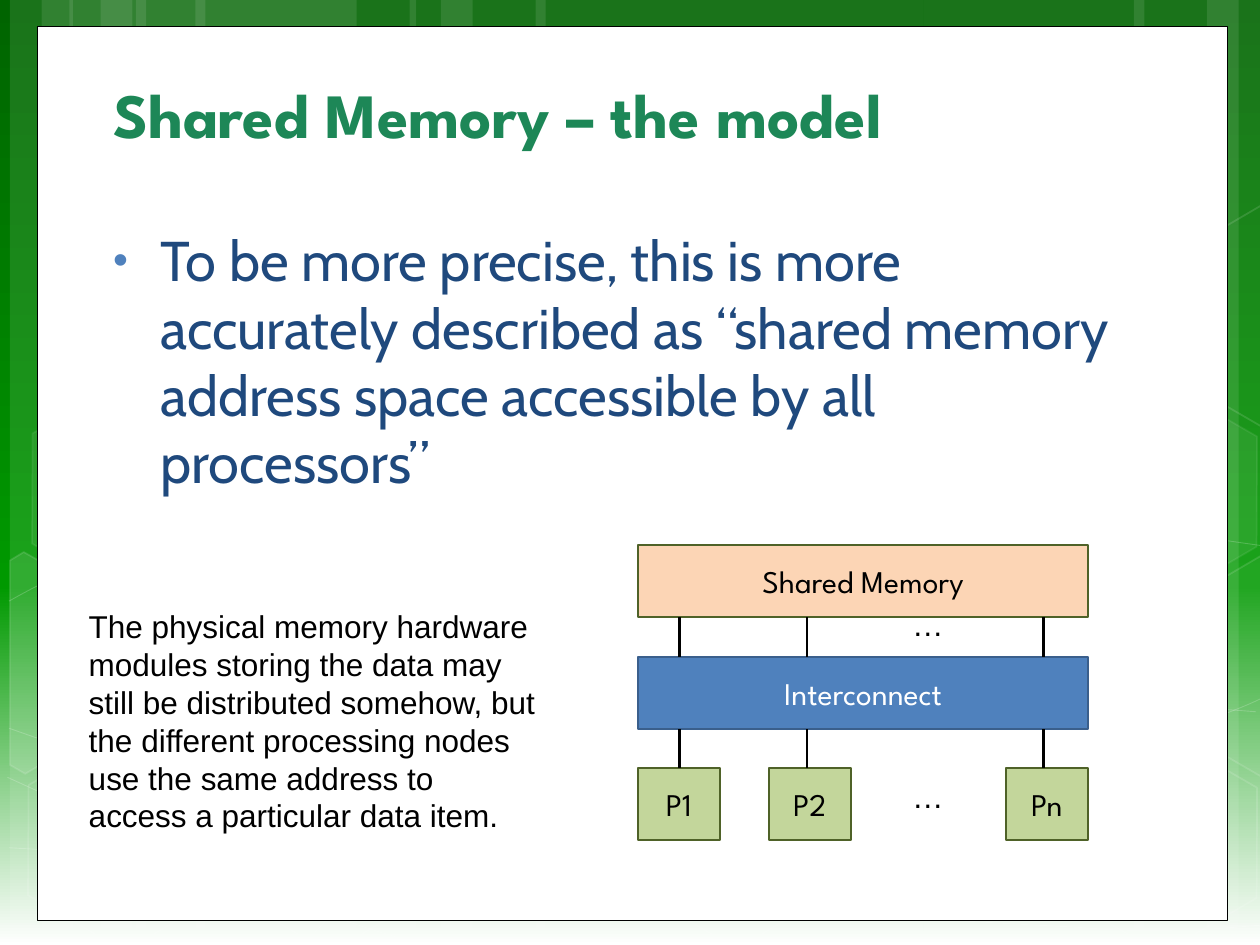
from copy import deepcopy
from dataclasses import dataclass
from lxml.etree import SubElement
from pptx import Presentation
from pptx.dml.color import RGBColor
from pptx.enum.shapes import MSO_CONNECTOR, MSO_SHAPE
from pptx.enum.text import MSO_ANCHOR, PP_ALIGN
from pptx.oxml.ns import qn
from pptx.util import Cm, Pt


@dataclass(frozen=True)
class Theme:
    white: str = "FFFFFF"
    black: str = "000000"
    dark: str = "006400"
    green: str = "009900"
    blue: str = "4F81BD"
    navy: str = "3A5F8C"
    peach: str = "FCD5B5"
    lime: str = "C3D69B"
    olive: str = "4F6228"
    title: tuple = ("League Spartan", 36, "1D8757")
    body: tuple = ("Cabin", 32, "1F497D")
    note: tuple = ("Arial", 18, "000000")
    tag: tuple = ("League Spartan", 18, "000000")
    light: tuple = ("League Spartan", 18, "FFFFFF")


THEME = Theme()
STRIPS = [(2.74, 4.45), (0.2, 1.27), (0.84, 2.11), (3.94, 4.45), (1.4, 1.27), (2.03, 2.11),
          (18.62, 4.45), (24.33, 1.27), (22.86, 2.11), (10.8, 7.82), (8.26, 1.27), (8.89, 2.11)]
CURVES = [
    [(0.18, 17.09), (1.55, 17.17), (2.92, 17.25), (4.83, 17.22), (6.73, 17.2),
     (9.09, 17.15), (11.63, 16.89), (14.17, 16.64), (17.78, 16.15), (20.12, 15.67),
     (22.43, 15.19), (24.82, 14.43), (25.58, 14)],
    [(0.18, 12.12), (0.91, 11.71), (1.65, 11.33), (3.07, 10.95), (4.52, 10.57),
     (6.58, 10.01), (8.81, 9.83), (11.07, 9.65), (13.82, 9.63), (16.61, 9.83),
     (19.41, 10.03), (24.05, 10.82), (25.58, 11.02)],
    [(0.15, 15.67), (3.23, 17.07), (6.27, 18.47), (8.48, 19.02)],
    [(0.18, 14.68), (0.97, 14.96), (1.78, 15.24), (3.25, 15.65), (4.72, 16.03),
     (6.93, 16.66), (9.07, 17.09), (11.18, 17.53), (13.84, 17.98), (15.95, 18.24),
     (18.06, 18.52), (20.32, 18.62), (21.67, 18.69), (22.99, 18.8), (23.34, 18.75),
     (24, 18.75), (24.66, 18.72), (25.12, 18.67), (25.58, 18.64)],
    [(6.15, 19.02), (6.6, 18.52), (7.06, 18.01), (7.67, 17.55), (8.28, 17.09),
     (9.14, 16.59), (9.86, 16.23), (10.57, 15.88), (11, 15.72), (11.94, 15.47),
     (12.85, 15.21), (14.55, 14.86), (15.44, 14.68), (16.36, 14.5), (16.48, 14.5),
     (17.27, 14.45), (18.06, 14.38), (19.3, 14.3), (20.17, 14.27), (21.06, 14.25),
     (22.5, 14.27), (22.5, 14.27), (23.07, 14.27), (23.64, 14.27), (24.21, 14.27),
     (24.66, 14.3), (25.1, 14.33), (25.32, 14.35)],
]
CELLS = [(12.62, 14.96, 6, 12), (0.28, 15.01, 0, 12), (0.36, 7.92, 7, 8),
         (4.42, 15.04, 0, 12), (21.18, 15.06, 0, 12), (21.18, 7.98, 7, 8)]
SHARDS = [
    (10, [(0.2, 11.3), (0.48, 11.13), (2.44, 12.24), (2.41, 14.48), (0.51, 15.6), (0.2, 15.42)]),
    (4, [(23.52, 12.32), (25.43, 11.2), (25.63, 11.33), (25.63, 15.57), (25.45, 15.67),
         (23.52, 14.55)]),
    (0, [(23.52, 5.26), (25.43, 4.14), (25.65, 4.27), (25.63, 8.51), (25.45, 8.61),
         (23.52, 7.49)]),
]


def tint(name):
    return RGBColor.from_string(name)


def fade(node, share):
    for color in node.iter(qn("a:srgbClr")):
        SubElement(color, qn("a:alpha")).set("val", str(share * 1000))


def veil(shape, fill, edge=0, width=1):
    shape.shadow.inherit = False
    for part, share in ((shape.fill, fill), (shape.line.fill, edge)):
        if share:
            part.solid()
            part.fore_color.rgb = tint(THEME.white)
        else:
            part.background()
    props = shape.element.spPr
    if fill:
        fade(props.find(qn("a:solidFill")), fill)
    if edge:
        shape.line.width = Pt(width)
        fade(props.find(qn("a:ln")), edge)


def outline(slide, points, close):
    spots = [(Cm(x), Cm(y)) for x, y in points]
    maker = slide.shapes.build_freeform(*spots[0])
    maker.add_line_segments(spots[1:], close=close)
    return maker.convert_to_shape()


def curve(slide, points):
    shape = outline(slide, points, False)
    route = next(shape.element.iter(qn("a:path")))
    lines = route.findall(qn("a:lnTo"))
    for start in range(0, len(lines), 3):
        bend = SubElement(route, qn("a:cubicBezTo"))
        for line in lines[start:start + 3]:
            bend.append(line[0])
            route.remove(line)
    return shape


def ground(slide):
    fill = slide.background.fill
    fill.gradient()
    fill.gradient_angle = 270
    stops = next(slide.element.iter(qn("a:gsLst")))
    stops.append(deepcopy(stops[-1]))
    shades = [(0, THEME.dark), (0.62, THEME.green), (1, THEME.white)]
    for stop, (place, shade) in zip(fill.gradient_stops, shades):
        stop.position = place
        stop.color.rgb = tint(shade)


def decor(slide):
    add = slide.shapes.add_shape
    for left, width in STRIPS:
        veil(add(MSO_SHAPE.RECTANGLE, Cm(left), 0, Cm(width), Cm(19.05)), 10)
    for points in CURVES:
        veil(curve(slide, points), 0, 20, 0.5)
    for left, top, fill, edge in CELLS:
        cell = add(MSO_SHAPE.HEXAGON, Cm(left), Cm(top), Cm(4.45), Cm(3.86))
        cell.adjustments[0], cell.adjustments[1] = 0.285, 1.155
        cell.rotation = 30
        veil(cell, fill, edge)
    for fill, points in SHARDS:
        veil(outline(slide, points, True), fill, 12)


def style(frame, words, look):
    frame.word_wrap = True
    frame.text = words
    font = frame.paragraphs[0].runs[0].font
    font.name, size, color = look
    font.size = Pt(size)
    font.color.rgb = tint(color)
    font.bold = look == THEME.title


def label(slide, place, words, look):
    frame = slide.shapes.add_textbox(*map(Cm, place)).text_frame
    style(frame, words, look)
    return frame


def bullet(para):
    props = para._p.get_or_add_pPr()
    props.set("marL", str(Cm(0.95)))
    props.set("indent", str(-Cm(1)))
    SubElement(SubElement(props, qn("a:spcBef")), qn("a:spcPct")).set("val", "20000")
    SubElement(SubElement(props, qn("a:buClr")), qn("a:srgbClr")).set("val", THEME.blue)
    for tag, name, value in (("a:buSzPct", "val", "76000"),
                             ("a:buFont", "typeface", "Arial"), ("a:buChar", "char", "•")):
        SubElement(props, qn(tag)).set(name, value)


def box(slide, place, fill, edge, width=1.25, words="", look=THEME.tag):
    shape = slide.shapes.add_shape(MSO_SHAPE.RECTANGLE, *map(Cm, place))
    shape.shadow.inherit = False
    shape.fill.solid()
    shape.fill.fore_color.rgb = tint(fill)
    shape.line.color.rgb = tint(edge)
    shape.line.width = Pt(width)
    if words:
        style(shape.text_frame, words, look)
        shape.text_frame.vertical_anchor = MSO_ANCHOR.MIDDLE
        shape.text_frame.paragraphs[0].alignment = PP_ALIGN.CENTER


def link(slide, x, top, base):
    line = slide.shapes.add_connector(MSO_CONNECTOR.STRAIGHT, Cm(x), Cm(base), Cm(x), Cm(top))
    line.line.color.rgb = tint(THEME.black)
    line.line.width = Pt(1.5)
    SubElement(line.element.spPr, qn("a:effectLst"))


def model(slide):
    left, wide, high = 12.86, 9.08, 1.45
    store, net, nodes = 10.99, 13.24, 15.48
    box(slide, (left, net, wide, high), THEME.blue, THEME.navy, 1.25, "Interconnect", THEME.light)
    for x, name in ((left, "P1"), (15.5, "P2"), (20.28, "Pn")):
        box(slide, (x, nodes, 1.65, high), THEME.lime, THEME.olive, words=name)
    box(slide, (left, store, wide, high), THEME.peach, THEME.olive, words="Shared Memory")
    for upper, lower, dots in ((net, nodes, 15.54), (store, net, 12.08)):
        for x in (13.7, 16.27, 21.04):
            link(slide, x, upper + high, lower)
        label(slide, (18.14, dots, 1.47, 1.02), "…", THEME.note)


def main():
    deck = Presentation()
    deck.slide_width, deck.slide_height = Cm(25.4), Cm(19.05)
    slide = deck.slides.add_slide(deck.slide_layouts[6])
    ground(slide)
    decor(slide)
    box(slide, (0.76, 0.53, 23.98, 18.02), THEME.white, THEME.black, 0.5)
    title = label(slide, (2.03, 1.24, 21.39, 1.93), "Shared Memory – the model", THEME.title)
    title.vertical_anchor = MSO_ANCHOR.BOTTOM
    body = label(slide, (2.03, 4.43, 21.39, 12.55),
                 "To be more precise, this is more accurately described as "
                 "“shared memory address space accessible by all processors”", THEME.body)
    bullet(body.paragraphs[0])
    note = label(slide, (0.27, 12.12, 10.82, 4.88),
                 "The physical memory hardware modules storing the data may still be distributed "
                 "somehow, but the different processing nodes use the same address to access "
                 "a particular data item.", THEME.note)
    note.paragraphs[0]._p.get_or_add_pPr().set("marL", str(Cm(1.27)))
    model(slide)
    deck.save("out.pptx")


if __name__ == "__main__":
    main()
